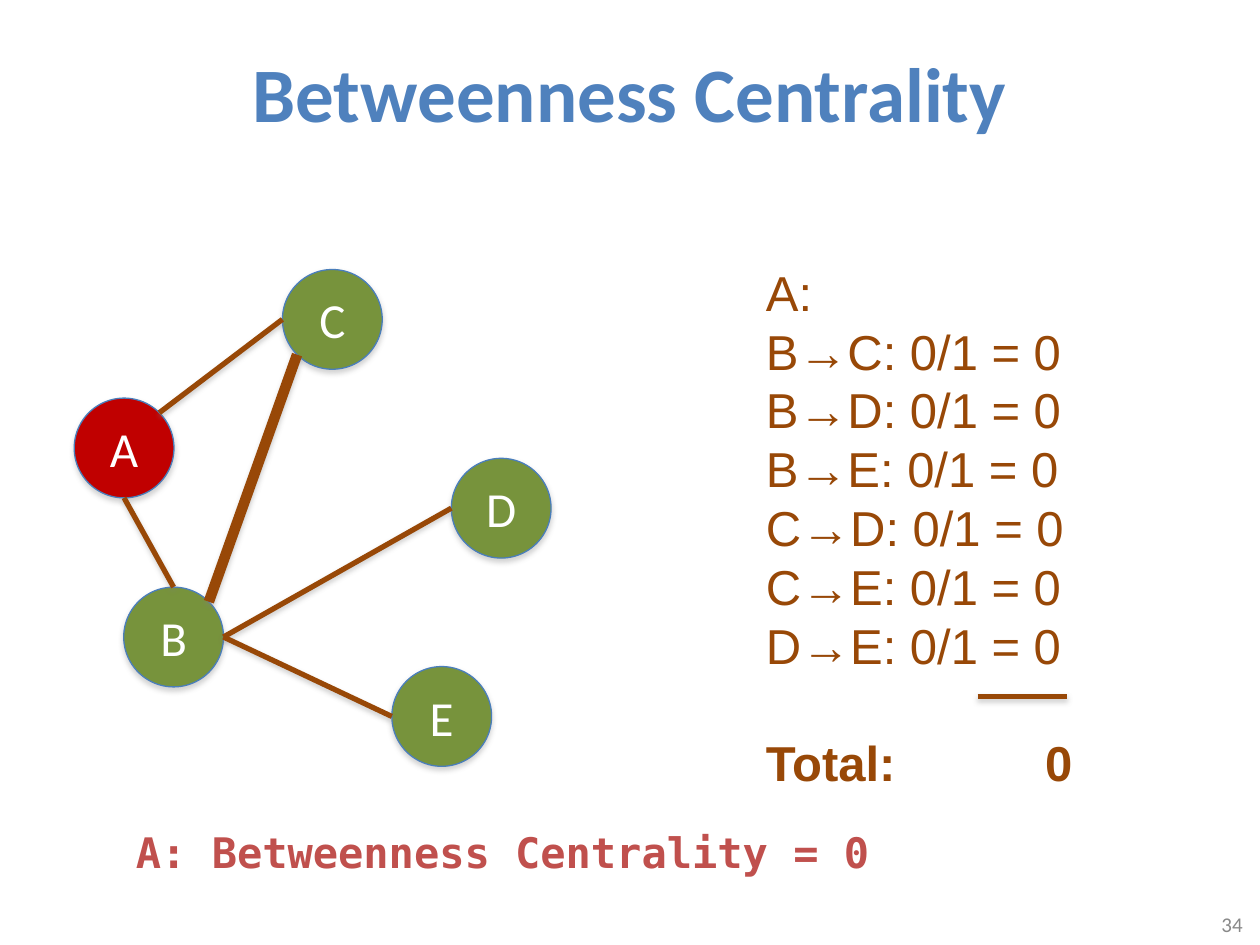
from math import cos, radians, sin

from lxml.etree import SubElement
from pptx import Presentation
from pptx.dml.color import RGBColor
from pptx.enum.shapes import MSO_CONNECTOR as CONN, MSO_SHAPE as SHAPE
from pptx.enum.text import MSO_ANCHOR as ANCHOR, PP_ALIGN as ALIGN
from pptx.oxml.ns import qn
from pptx.util import Pt

BROWN, GREEN, RED = "984807", "77933C", "C00000"
DIAMETER = 57


def rgb(value):
    return RGBColor.from_string(value)


def write(tf, text, size=28, font="Calibri", color="FFFFFF", bold=False,
          align=ALIGN.LEFT, anchor=ANCHOR.TOP, spacing=None):
    """Fill a text frame, one paragraph for each line of text."""
    tf.word_wrap = True
    tf.vertical_anchor = anchor
    for i, line in enumerate(text.split("\n")):
        p = tf.add_paragraph() if i else tf.paragraphs[0]
        p.alignment = align
        if spacing:
            p.line_spacing = Pt(spacing)
        r = p.add_run()
        r.text = line
        r.font.size, r.font.name, r.font.bold = Pt(size), font, bold
        r.font.color.rgb = rgb(color)


def add_shadow(sp, alpha, dist):
    """Give a shape or connector a soft grey shadow straight below it."""
    effects = SubElement(sp._element.spPr, qn("a:effectLst"))
    shadow = SubElement(effects, qn("a:outerShdw"), blurRad=str(Pt(3.1)),
                        dist=str(Pt(dist)), dir="5400000", rotWithShape="0")
    color = SubElement(shadow, qn("a:srgbClr"), val="808080")
    SubElement(color, qn("a:alpha"), val=str(alpha * 1000))


class Deck:
    def __init__(self):
        self.prs = Presentation()
        self.prs.slide_width, self.prs.slide_height = Pt(720), Pt(540)
        self.slide = self.prs.slides.add_slide(self.prs.slide_layouts[5])
        self.shapes = self.slide.shapes

    def title(self, text, x, y, w, h):
        sp = self.shapes.title
        sp.left, sp.top, sp.width, sp.height = Pt(x), Pt(y), Pt(w), Pt(h)
        write(sp.text_frame, text, size=44, color="4F81BD", bold=True,
              align=ALIGN.CENTER, anchor=ANCHOR.MIDDLE)

    def text(self, text, x, y, w, h, **style):
        sp = self.shapes.add_textbox(Pt(x), Pt(y), Pt(w), Pt(h))
        write(sp.text_frame, text, **style)
        return sp.text_frame

    def node(self, label, cx, cy, fill):
        r = DIAMETER / 2
        sp = self.shapes.add_shape(SHAPE.OVAL, Pt(cx - r), Pt(cy - r),
                                   Pt(DIAMETER), Pt(DIAMETER))
        sp.fill.solid()
        sp.fill.fore_color.rgb = rgb(fill)
        sp.line.color.rgb = rgb("4A7EBB")
        sp.line.width = Pt(0.75)
        add_shadow(sp, 35, 1.8)
        tf = sp.text_frame
        tf.margin_left = tf.margin_top = tf.margin_right = tf.margin_bottom = 0
        write(tf, label, align=ALIGN.CENTER, anchor=ANCHOR.MIDDLE)

    def line(self, start, end, width=3):
        sp = self.shapes.add_connector(CONN.STRAIGHT, *map(Pt, start + end))
        sp.line.color.rgb = rgb(BROWN)
        sp.line.width = Pt(width)
        add_shadow(sp, 38, 1.6)


def rim(center, angle):
    """Point on a node's rim, with the angle clockwise from the right."""
    a = radians(angle)
    return (center[0] + DIAMETER / 2 * cos(a), center[1] + DIAMETER / 2 * sin(a))


def main():
    deck = Deck()
    deck.title("Betweenness Centrality", 36, 21.6, 648, 61.2)
    deck.text("34", 549.4, 513.4, 167.8, 28.8, size=12, color="898989",
              align=ALIGN.RIGHT, anchor=ANCHOR.MIDDLE)

    # Graph nodes by centre
    nodes = {"A": (70.9, 256), "B": (99.2, 364), "D": (286.4, 290.4),
             "E": (252.4, 409.4), "C": (189.9, 182.5)}
    for label, center in nodes.items():
        deck.node(label, *center, RED if label == "A" else GREEN)

    # Edges: node and rim angle at each end, then width
    edges = [("A", 90, "B", 270, 3), ("A", -45, "C", 180, 3),
             ("B", -45, "C", 135, 6), ("B", 0, "D", 180, 3),
             ("B", 0, "E", 180, 3)]
    for a, a_angle, b, b_angle, width in edges:
        deck.line(rim(nodes[a], a_angle), rim(nodes[b], b_angle), width)

    # Shortest paths through A, with the sum under a rule
    pairs = ["B→C", "B→D", "B→E", "C→D", "C→E", "D→E"]
    rows = ["A:"] + [f"{pair}: 0/1 = 0" for pair in pairs] + ["Total:\t0"]
    tf = deck.text("\n".join(rows), 430.6, 146.4, 194, 312.5,
                   font="Arial", color=BROWN, spacing=33.6)
    total = tf.paragraphs[-1]
    total.space_before = Pt(33.6)
    total.runs[0].font.bold = True
    tabs = SubElement(total._p.get_or_add_pPr(), qn("a:tabLst"))
    SubElement(tabs, qn("a:tab"), pos=str(Pt(159.5)), algn="l")
    deck.line((558.7, 398.2), (609.8, 398.2))

    # Result
    deck.text("A: Betweenness Centrality = 0", 70.6, 468.7, 584, 36, size=24,
              font="DejaVu Sans Mono", color="C0504D", bold=True)
    deck.prs.save("out.pptx")


if __name__ == "__main__":
    main()
